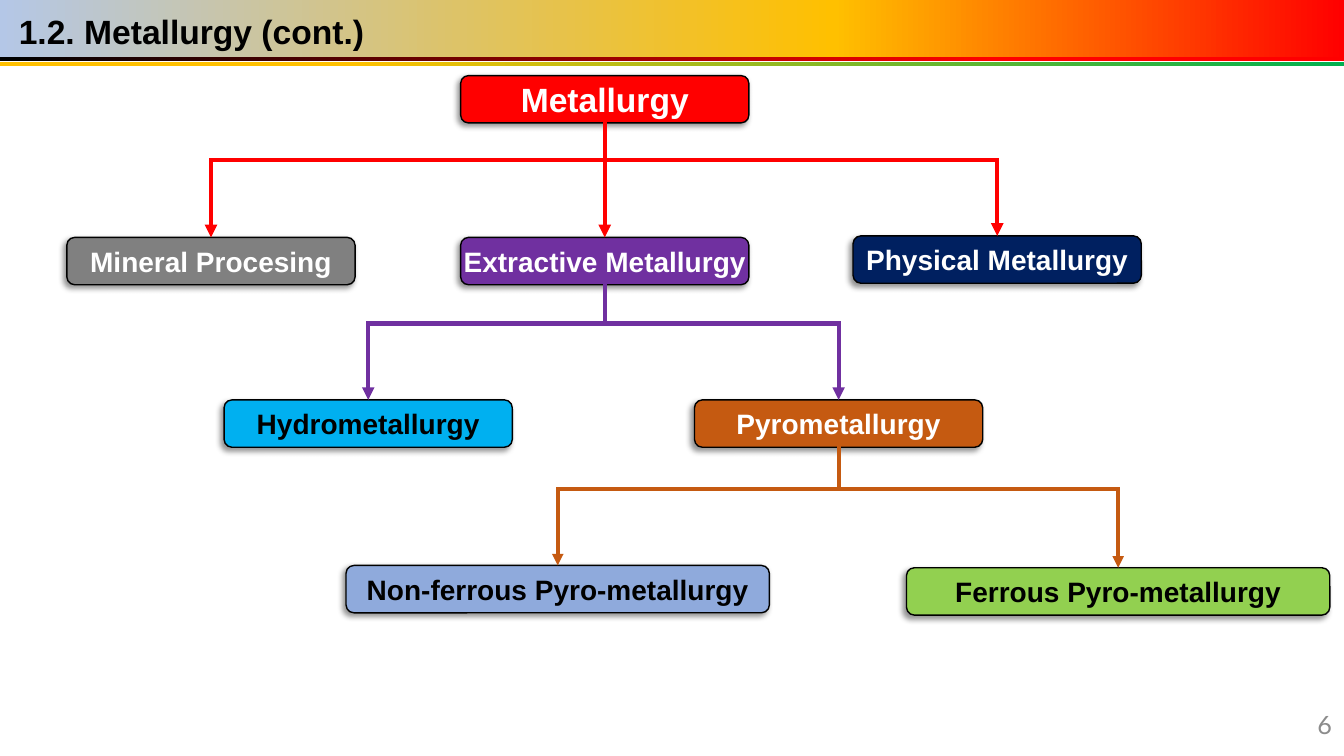
from dataclasses import dataclass

from lxml import etree
from pptx import Presentation, util as u
from pptx.dml.color import RGBColor
from pptx.enum import shapes, text
from pptx.oxml import parse_xml
from pptx.oxml.ns import nsdecls, qn


@dataclass(frozen=True)
class Theme:
    font: str = "Arial"
    number_font: str = "Lato"
    heading: int = 24
    body: int = 20
    number: int = 18
    black: str = "000000"
    white: str = "FFFFFF"
    muted: str = "8C8C8C"
    red: str = "FF0000"
    amber: str = "FFC000"
    pale_blue: str = "B4C7E7"
    green: str = "00B050"
    gray: str = "808080"
    purple: str = "7030A0"
    navy: str = "002060"
    sky: str = "00B0F0"
    rust: str = "C55A11"
    periwinkle: str = "8FAADC"
    lime: str = "92D050"


theme = Theme()

presentation = Presentation()
presentation.slide_width = u.Inches(13.333)
presentation.slide_height = u.Inches(7.5)
slide = presentation.slides.add_slide(presentation.slide_layouts[5])

# The slide is a grid of 100 columns by 100 rows.
COLUMN = presentation.slide_width / 100
ROW = presentation.slide_height / 100


def write(shape, words, size, color, font=theme.font, bold=True,
          align=text.PP_ALIGN.CENTER):
    frame = shape.text_frame
    frame.text = words
    frame.word_wrap = True
    frame.auto_size = text.MSO_AUTO_SIZE.NONE
    frame.vertical_anchor = text.MSO_ANCHOR.MIDDLE
    frame.margin_left = frame.margin_right = 0
    frame.margin_top = frame.margin_bottom = 0
    paragraph = frame.paragraphs[0]
    paragraph.alignment = align
    paragraph.font.name = font
    paragraph.font.size = u.Pt(size)
    paragraph.font.bold = bold
    paragraph.font.color.rgb = RGBColor.from_string(color)


def connect(start, end, color, weight, arrow=False):
    """Draw a line between two (column, row) points."""
    line = slide.shapes.add_connector(
        shapes.MSO_CONNECTOR.STRAIGHT,
        int(start[0] * COLUMN), int(start[1] * ROW),
        int(end[0] * COLUMN), int(end[1] * ROW))
    line.line.color.rgb = RGBColor.from_string(color)
    line.line.width = u.Pt(weight)
    outline = line.line._get_or_add_ln()
    outline.set("cap", "sq")
    if arrow:
        etree.SubElement(outline, qn("a:tailEnd"), type="triangle")
    etree.SubElement(line._element.spPr, qn("a:effectLst"))


# Header bands: top row, height in rows, gradient stops from left to right
bands = [
    (0, 7.6, [(0, theme.pale_blue), (62, theme.amber), (100, theme.red)]),
    (8.2, 0.55, [(26, theme.amber), (100, theme.green)]),
    (7.5, 0.55, [(1, theme.black), (74, theme.red)]),
]
for top, height, stops in bands:
    band = slide.shapes.add_shape(
        shapes.MSO_SHAPE.RECTANGLE, 0, int(top * ROW),
        presentation.slide_width, int(height * ROW))
    band.shadow.inherit = False
    band.line.fill.background()
    stop_xml = "".join(
        f'<a:gs pos="{share * 1000}"><a:srgbClr val="{color}"/></a:gs>'
        for share, color in stops)
    band._element.spPr.find(qn("a:prstGeom")).addnext(parse_xml(
        f'<a:gradFill {nsdecls("a")} rotWithShape="1">'
        f'<a:gsLst>{stop_xml}</a:gsLst><a:lin ang="0" scaled="0"/></a:gradFill>'))

title = slide.shapes.title
title.left, title.top = int(1.4 * COLUMN), int(0.8 * ROW)
title.width, title.height = int(65 * COLUMN), int(6.7 * ROW)
write(title, "1.2. Metallurgy (cont.)", theme.heading, theme.black,
      align=text.PP_ALIGN.LEFT)
slide.shapes._spTree.append(title._element)  # in front of the bands

page_number = slide.shapes.add_textbox(
    int(95 * COLUMN), int(93.2 * ROW), int(4.1 * COLUMN), int(5.3 * ROW))
write(page_number, "6", theme.number, theme.muted, theme.number_font, False,
      text.PP_ALIGN.RIGHT)

# Boxes: name -> centre column, top row, width, fill, text colour, text size
BOX_HEIGHT = 6.27
NARROW, WIDE = 21.45, 31.5
boxes = {
    "Metallurgy": (45, 10, NARROW, theme.red, theme.white, theme.heading),
    "Mineral Procesing": (15.7, 31.4, NARROW, theme.gray, theme.white, theme.body),
    "Extractive Metallurgy": (45, 31.4, NARROW, theme.purple, theme.white, theme.body),
    "Physical Metallurgy": (74.2, 31.2, NARROW, theme.navy, theme.white, theme.body),
    "Hydrometallurgy": (27.4, 52.9, NARROW, theme.sky, theme.black, theme.body),
    "Pyrometallurgy": (62.4, 52.9, NARROW, theme.rust, theme.white, theme.body),
    "Non-ferrous Pyro-metallurgy": (41.5, 74.8, WIDE, theme.periwinkle,
                                    theme.black, theme.body),
    "Ferrous Pyro-metallurgy": (83.2, 75.1, WIDE, theme.lime, theme.black, theme.body),
}
for name, (center, top, width, fill, color, size) in boxes.items():
    box = slide.shapes.add_shape(
        shapes.MSO_SHAPE.ROUNDED_RECTANGLE,
        int((center - width / 2) * COLUMN), int(top * ROW),
        int(width * COLUMN), int(BOX_HEIGHT * ROW))
    box.fill.solid()
    box.fill.fore_color.rgb = RGBColor.from_string(fill)
    box.line.color.rgb = RGBColor.from_string(theme.black)
    box.line.width = u.Pt(1)
    box.shadow.inherit = False
    box._element.spPr.find(qn("a:effectLst")).append(parse_xml(
        f'<a:outerShdw {nsdecls("a")} blurRad="{u.Pt(4)}" dist="{u.Pt(3)}" '
        f'dir="{140 * 60000}" algn="tr" rotWithShape="0">'
        f'<a:srgbClr val="{theme.black}"><a:alpha val="42000"/></a:srgbClr>'
        '</a:outerShdw>'))
    write(box, name, size, color)

# Branches: parent, rail row, line weight, children
branches = [
    ("Metallurgy", 21.2, 3,
     ["Mineral Procesing", "Extractive Metallurgy", "Physical Metallurgy"]),
    ("Extractive Metallurgy", 42.8, 3, ["Hydrometallurgy", "Pyrometallurgy"]),
    ("Pyrometallurgy", 64.7, 2.75,
     ["Non-ferrous Pyro-metallurgy", "Ferrous Pyro-metallurgy"]),
]
for parent, rail, weight, children in branches:
    stem, parent_top, _, color, _, _ = boxes[parent]
    connect((stem, parent_top + BOX_HEIGHT), (stem, rail), color, weight)
    for child in children:
        center, child_top = boxes[child][:2]
        if center != stem:
            connect((stem, rail), (center, rail), color, weight)
        connect((center, rail), (center, child_top), color, weight, arrow=True)

presentation.save("out.pptx")
